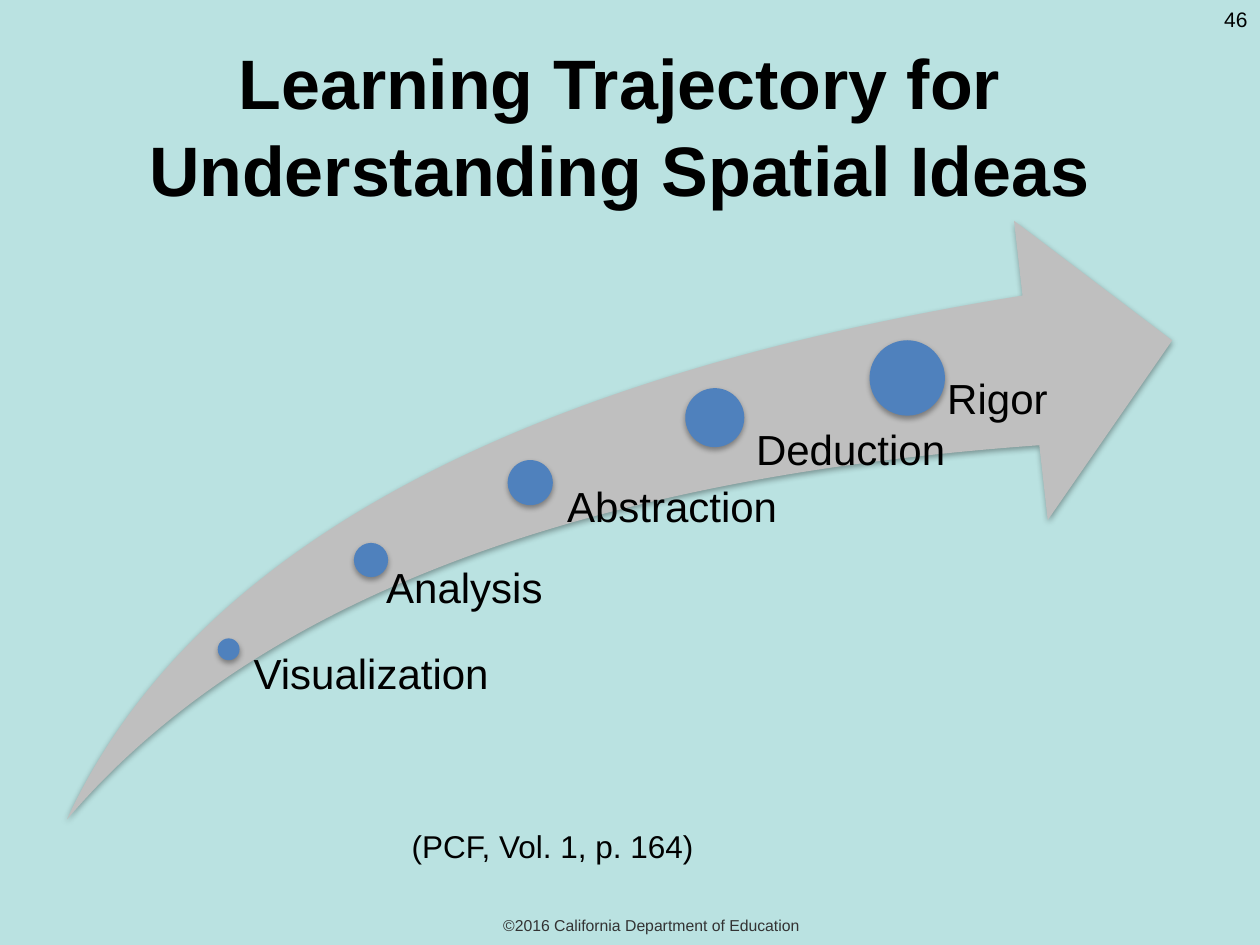
from dataclasses import dataclass

from lxml.etree import SubElement
from pptx import Presentation
from pptx.dml.color import RGBColor
from pptx.enum.shapes import MSO_SHAPE
from pptx.enum.text import MSO_ANCHOR, MSO_AUTO_SIZE, PP_ALIGN
from pptx.oxml.ns import qn
from pptx.util import Cm, Pt


@dataclass(frozen=True)
class Theme:
    font: str = "Arial"
    background: str = "BAE2E1"
    text: str = "000000"
    footer: str = "333333"
    arrow: str = "BFBFBF"
    dot: str = "4F81BD"
    title_size: int = 40
    label_size: int = 24
    source_size: int = 18
    number_size: int = 12
    footer_size: int = 9


THEME = Theme()

# Stage, dot centre x and y, dot diameter, label left, top, width, height (cm)
STAGES = [
    ("Visualization", 4.61, 13.09, 0.44, 4.88, 13.16, 6.05, 2.11),
    ("Analysis", 7.48, 11.29, 0.69, 7.42, 11.43, 5.99, 3.15),
    ("Abstraction", 10.69, 9.73, 0.91, 10.95, 9.8, 6.91, 4.09),
    ("Deduction", 14.41, 8.42, 1.19, 14.61, 8.66, 4.55, 5.03),
    ("Rigor", 18.29, 7.62, 1.52, 18.29, 7.62, 3.86, 8.89),
]
INSET_RATIO = 0.53  # label inset per dot diameter


def write(tf, text, size, color=THEME.text, align=PP_ALIGN.LEFT, bold=False):
    p = tf.paragraphs[0]
    p.alignment = align
    r = p.add_run()
    r.text = text
    r.font.name = THEME.font
    r.font.size = Pt(size)
    r.font.bold = bold
    r.font.color.rgb = RGBColor.from_string(color)
    return p


def add_text(shapes, box, text, size, **style):
    sp = shapes.add_textbox(*map(Cm, box))
    sp.text_frame.word_wrap = True
    write(sp.text_frame, text, size, **style)
    return sp.text_frame


def add_shadow(sp):
    effects = SubElement(sp._element.spPr, qn("a:effectLst"))
    shadow = SubElement(effects, qn("a:outerShdw"), blurRad="40000",
                        dist="23000", dir="5400000", rotWithShape="0")
    color = SubElement(shadow, qn("a:srgbClr"), val="000000")
    SubElement(color, qn("a:alpha"), val="35000")


def add_filled(shapes, kind, box, color):
    sp = shapes.add_shape(kind, *map(Cm, box))
    sp.fill.solid()
    sp.fill.fore_color.rgb = RGBColor.from_string(color)
    sp.line.fill.background()
    add_shadow(sp)
    return sp


def add_title(slide, box, text):
    title = slide.shapes.title
    title.left, title.top, title.width, title.height = map(Cm, box)
    tf = title.text_frame
    tf.word_wrap = True
    tf.auto_size = MSO_AUTO_SIZE.NONE
    tf.vertical_anchor = MSO_ANCHOR.MIDDLE
    p = write(tf, text, THEME.title_size, align=PP_ALIGN.CENTER, bold=True)
    p.line_spacing = 1.04


def add_stage(shapes, name, x, y, diameter, *label_box):
    corner = (x - diameter / 2, y - diameter / 2)
    add_filled(shapes, MSO_SHAPE.OVAL, (*corner, diameter, diameter), THEME.dot)
    tf = add_text(shapes, label_box, name, THEME.label_size)
    tf.margin_left = Cm(diameter * INSET_RATIO)
    tf.margin_top = tf.margin_right = tf.margin_bottom = 0
    tf.paragraphs[0].line_spacing = 0.9


def add_trajectory(slide):
    shapes = slide.shapes.add_group_shape().shapes
    arrow = add_filled(shapes, MSO_SHAPE.SWOOSH_ARROW,
                       (1.35, 4.45, 22.28, 12.07), THEME.arrow)
    arrow.adjustments[0] = arrow.adjustments[1] = 0.25
    for stage in STAGES:
        add_stage(shapes, *stage)


def main():
    prs = Presentation()
    prs.slide_width, prs.slide_height = Cm(25.4), Cm(19.05)
    slide = prs.slides.add_slide(prs.slide_layouts[5])
    fill = slide.background.fill
    fill.solid()
    fill.fore_color.rgb = RGBColor.from_string(THEME.background)

    # Page number and footer
    add_text(slide.shapes, (23.5, 0, 1.9, 0.76), "46", THEME.number_size,
             align=PP_ALIGN.RIGHT)
    footer = add_text(slide.shapes, (1.47, 18.34, 23.32, 0.64),
                      "©2016 California Department of Education",
                      THEME.footer_size, color=THEME.footer,
                      align=PP_ALIGN.CENTER)
    footer.vertical_anchor = MSO_ANCHOR.MIDDLE

    # Title
    add_title(slide, (0.84, 0.89, 23.29, 3.18),
              "Learning Trajectory for Understanding Spatial Ideas")

    # Rising arrow with its stages
    add_trajectory(slide)

    # Source
    add_text(slide.shapes, (8.05, 16.54, 11.89, 1.02),
             "(PCF, Vol. 1, p. 164)", THEME.source_size)
    prs.save("out.pptx")


if __name__ == "__main__":
    main()
